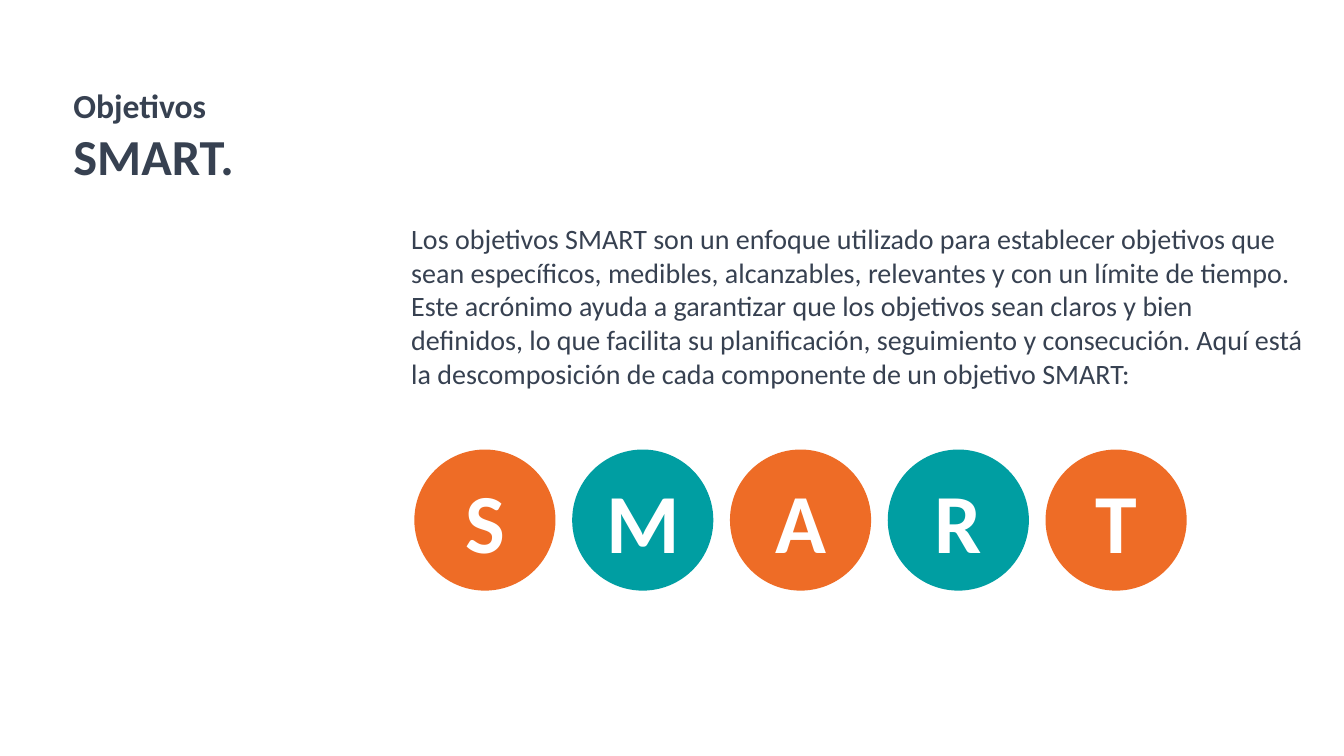
from dataclasses import dataclass

from pptx import Presentation
from pptx.dml.color import RGBColor
from pptx.enum.shapes import MSO_SHAPE
from pptx.enum.text import MSO_ANCHOR, MSO_AUTO_SIZE, PP_ALIGN
from pptx.util import Inches, Pt


@dataclass(frozen=True)
class Theme:
    """Colours, font and type sizes of the slide."""
    font: str = "Calibri"
    ink: str = "374151"
    white: str = "FFFFFF"
    circles: tuple = ("EE6C26", "009EA2")
    body: int = 20
    kicker: int = 24
    title: int = 36
    letter: int = 60


THEME = Theme()
INTRO = (
    "Los objetivos SMART son un enfoque utilizado para establecer objetivos que sean "
    "específicos, medibles, alcanzables, relevantes y con un límite de tiempo. Este "
    "acrónimo ayuda a garantizar que los objetivos sean claros y bien definidos, lo que "
    "facilita su planificación, seguimiento y consecución. Aquí está la descomposición "
    "de cada componente de un objetivo SMART:"
)


def style(p, size, color, bold=False):
    """Set the font of a paragraph."""
    p.font.name = THEME.font
    p.font.size = Pt(size)
    p.font.bold = bold
    p.font.color.rgb = RGBColor.from_string(color)


def add_text(s, box, lines, bold=False):
    """Add a text box with one paragraph per (text, size) line."""
    tf = s.shapes.add_textbox(*map(Inches, box)).text_frame
    tf.word_wrap = True
    tf.auto_size = MSO_AUTO_SIZE.SHAPE_TO_FIT_TEXT
    for i, (text, size) in enumerate(lines):
        p = tf.add_paragraph() if i else tf.paragraphs[0]
        p.text = text
        style(p, size, THEME.ink, bold)


def add_letter_circles(s, box, letters):
    """Spread one circle per letter evenly across the box."""
    left, top, width, size = box
    pitch = (width - size) / (len(letters) - 1)
    for i, letter in enumerate(letters):
        sp = s.shapes.add_shape(MSO_SHAPE.OVAL, Inches(left + i * pitch), Inches(top),
                                Inches(size), Inches(size))
        sp.shadow.inherit = False
        sp.fill.solid()
        sp.fill.fore_color.rgb = RGBColor.from_string(THEME.circles[i % len(THEME.circles)])
        sp.line.fill.background()
        tf = sp.text_frame
        tf.margin_left = tf.margin_right = tf.margin_top = tf.margin_bottom = 0
        tf.vertical_anchor = MSO_ANCHOR.MIDDLE
        p = tf.paragraphs[0]
        p.text = letter
        p.alignment = PP_ALIGN.CENTER
        style(p, THEME.letter, THEME.white, bold=True)


def main():
    """Build the SMART objectives slide."""
    prs = Presentation()
    prs.slide_width, prs.slide_height = Inches(13.33), Inches(7.5)
    s = prs.slides.add_slide(prs.slide_layouts[6])
    add_text(s, (3.98, 2.15, 9.05, 1.78), [(INTRO, THEME.body)])
    add_text(s, (0.63, 0.79, 10.23, 1.11),
             [("Objetivos", THEME.kicker), ("SMART.", THEME.title)], bold=True)
    add_letter_circles(s, (4.11, 4.46, 7.66, 1.4), "SMART")
    prs.save("out.pptx")


if __name__ == "__main__":
    main()
